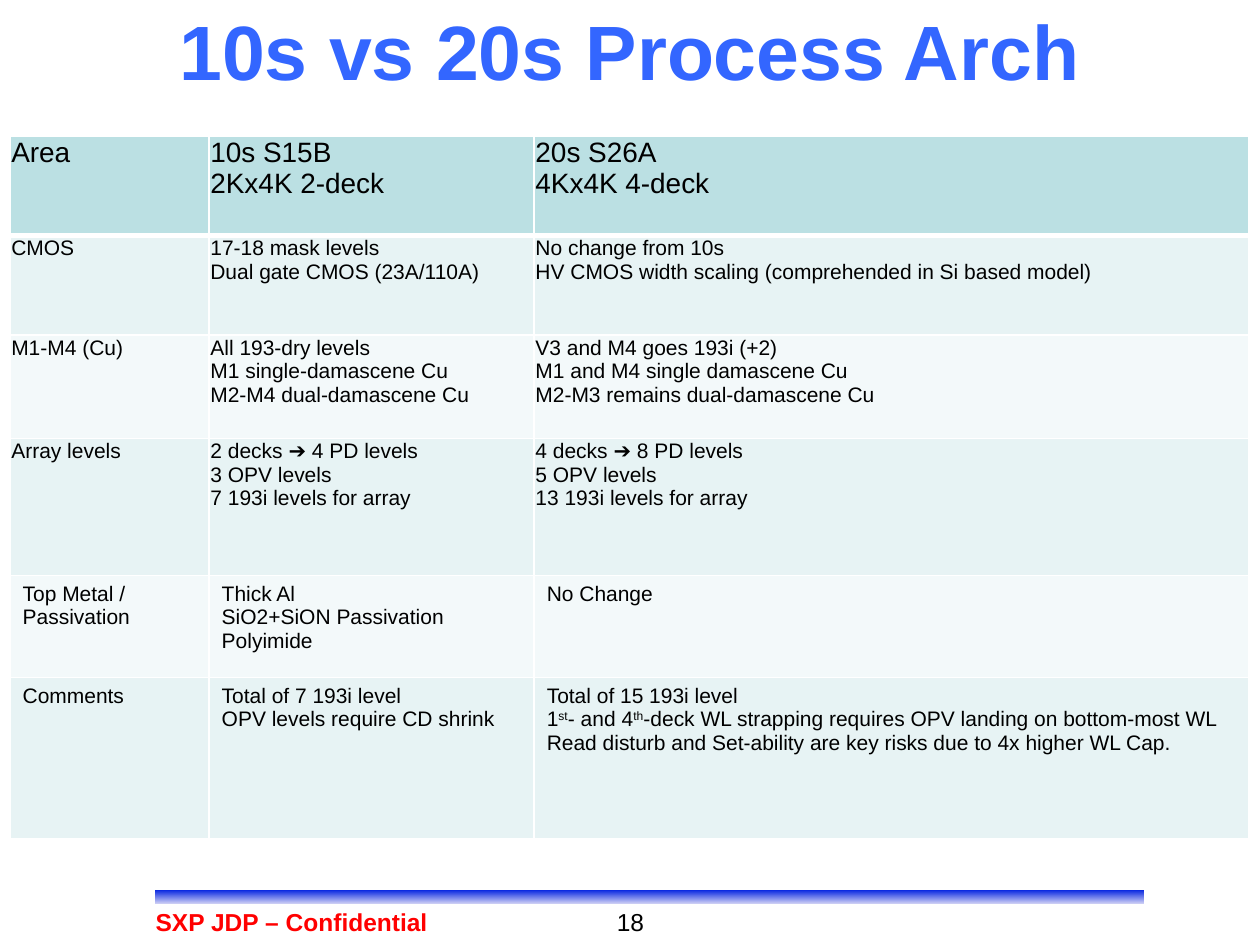
import lxml.etree
import pptx
import pptx.dml.color
import pptx.enum.shapes
import pptx.enum.text
import pptx.oxml.ns
import pptx.util

ALIGN = pptx.enum.text.PP_ALIGN
ANCHOR = pptx.enum.text.MSO_ANCHOR

THEME = {
    "font": "Arial",
    "title": {"size": 44, "color": "3366FF", "bold": True},
    "header": {"size": 16, "color": "000000", "bold": False},
    "body": {"size": 12, "color": "000000", "bold": False},
    "page": {"size": 14, "color": "000000", "bold": False},
    "notice": {"size": 14, "color": "FF0000", "bold": True},
    "row_fills": ["BBE0E3", "E7F3F4", "F3F9FA", "E7F3F4", "F3F9FA", "E7F3F4"],
    "bar": ["0020E0", "DADAF6"],
    "rule": "FFFFFF",
}

deck = pptx.Presentation()
deck.slide_width = pptx.util.Inches(10)
deck.slide_height = pptx.util.Inches(7.5)
slide = deck.slides.add_slide(deck.slide_layouts[6])
rgb = pptx.dml.color.RGBColor.from_string


def place(left, top, width, height):
    """Turn percentages of the slide's size into lengths."""
    shares = (left, top, width, height)
    sides = (deck.slide_width, deck.slide_height) * 2
    return [int(side * share / 100) for side, share in zip(sides, shares)]


def write(frame, text, style, align=ALIGN.LEFT):
    """Write one paragraph per line; text between carets is superscript."""
    frame.word_wrap = True
    for index, line in enumerate(text.split("\n")):
        paragraph = frame.paragraphs[0] if index == 0 else frame.add_paragraph()
        paragraph.alignment = align
        for part, words in enumerate(line.split("^")):
            run = paragraph.add_run()
            run.text = words
            look = {"name": THEME["font"], "size": pptx.util.Pt(style["size"]),
                    "bold": style["bold"]}
            for attribute, value in look.items():
                setattr(run.font, attribute, value)
            run.font.color.rgb = rgb(style["color"])
            if part % 2:
                run.font._element.set("baseline", "30000")


# Footer bar
bar = slide.shapes.add_shape(pptx.enum.shapes.MSO_SHAPE.RECTANGLE,
                             *place(12.2, 94.13, 78.7, 1.6))
bar.shadow.inherit = False
bar.fill.gradient()
bar.fill.gradient_angle = 270
for stop, color in zip(bar.fill.gradient_stops, THEME["bar"]):
    stop.color.rgb = rgb(color)
bar.line.color.rgb = rgb(THEME["rule"])
bar.line.width = pptx.util.Pt(1)

# Title and footer texts
captions = [
    ("10s vs 20s Process Arch", "title", ALIGN.CENTER, ANCHOR.MIDDLE, (5, 1.07, 90, 8.27)),
    ("18", "page", ALIGN.RIGHT, ANCHOR.TOP, (40.7, 95.33, 11.4, 3.6)),
    ("SXP JDP – Confidential", "notice", ALIGN.CENTER, ANCHOR.TOP, (7.2, 95.33, 31.9, 3.47)),
]
for text, style, align, anchor, box in captions:
    caption = slide.shapes.add_textbox(*place(*box)).text_frame
    caption.vertical_anchor = anchor
    write(caption, text, THEME[style], align)

# Process comparison
comparison = [
    ("Area", "10s S15B\n2Kx4K 2-deck", "20s S26A\n4Kx4K 4-deck"),
    ("CMOS",
     "17-18 mask levels\nDual gate CMOS (23A/110A)",
     "No change from 10s\nHV CMOS width scaling (comprehended in Si based model)"),
    ("M1-M4 (Cu)",
     "All 193-dry levels\nM1 single-damascene Cu\nM2-M4 dual-damascene Cu",
     "V3 and M4 goes 193i (+2)\nM1 and M4 single damascene Cu\nM2-M3 remains dual-damascene Cu"),
    ("Array levels",
     "2 decks ➔ 4 PD levels\n3 OPV levels\n7 193i levels for array",
     "4 decks ➔ 8 PD levels\n5 OPV levels\n13 193i levels for array"),
    ("Top Metal /\nPassivation",
     "Thick Al\nSiO2+SiON Passivation\nPolyimide",
     "No Change"),
    ("Comments",
     "Total of 7 193i level\nOPV levels require CD shrink",
     "Total of 15 193i level\n"
     "1^st^- and 4^th^-deck WL strapping requires OPV landing on bottom-most WL\n"
     "Read disturb and Set-ability are key risks due to 4x higher WL Cap."),
]
column_widths = [1.58, 2.58, 5.67]
row_heights = [0.79, 0.79, 0.82, 1.09, 0.81, 1.28]
tight_margins = {"margin_left": 0.01, "margin_top": 0.01,
                 "margin_right": 0.01, "margin_bottom": 0}

table = slide.shapes.add_table(len(row_heights), len(column_widths),
                               *place(0.8, 14.4, 98.3, 74.4)).table
table.first_row = table.horz_banding = False
for column, width in zip(table.columns, column_widths):
    column.width = pptx.util.Inches(width)
for row, height in zip(table.rows, row_heights):
    row.height = pptx.util.Inches(height)

qn = pptx.oxml.ns.qn
for r, areas in enumerate(comparison):
    for c, text in enumerate(areas):
        cell = table.cell(r, c)
        if r < 4:
            for margin, inches in tight_margins.items():
                setattr(cell, margin, pptx.util.Inches(inches))
        write(cell.text_frame, text, THEME["header" if r == 0 else "body"])
        cell.fill.solid()
        cell.fill.fore_color.rgb = rgb(THEME["row_fills"][r])
        # White rules, thicker below the header
        properties = cell._tc.get_or_add_tcPr()
        for position, side in enumerate(("lnL", "lnR", "lnT", "lnB")):
            points = 3 if (r, side) in ((0, "lnB"), (1, "lnT")) else 1
            rule = lxml.etree.Element(qn("a:" + side), w=str(pptx.util.Pt(points)))
            paint = lxml.etree.SubElement(rule, qn("a:solidFill"))
            lxml.etree.SubElement(paint, qn("a:srgbClr"), val=THEME["rule"])
            properties.insert(position, rule)

deck.save("out.pptx")
